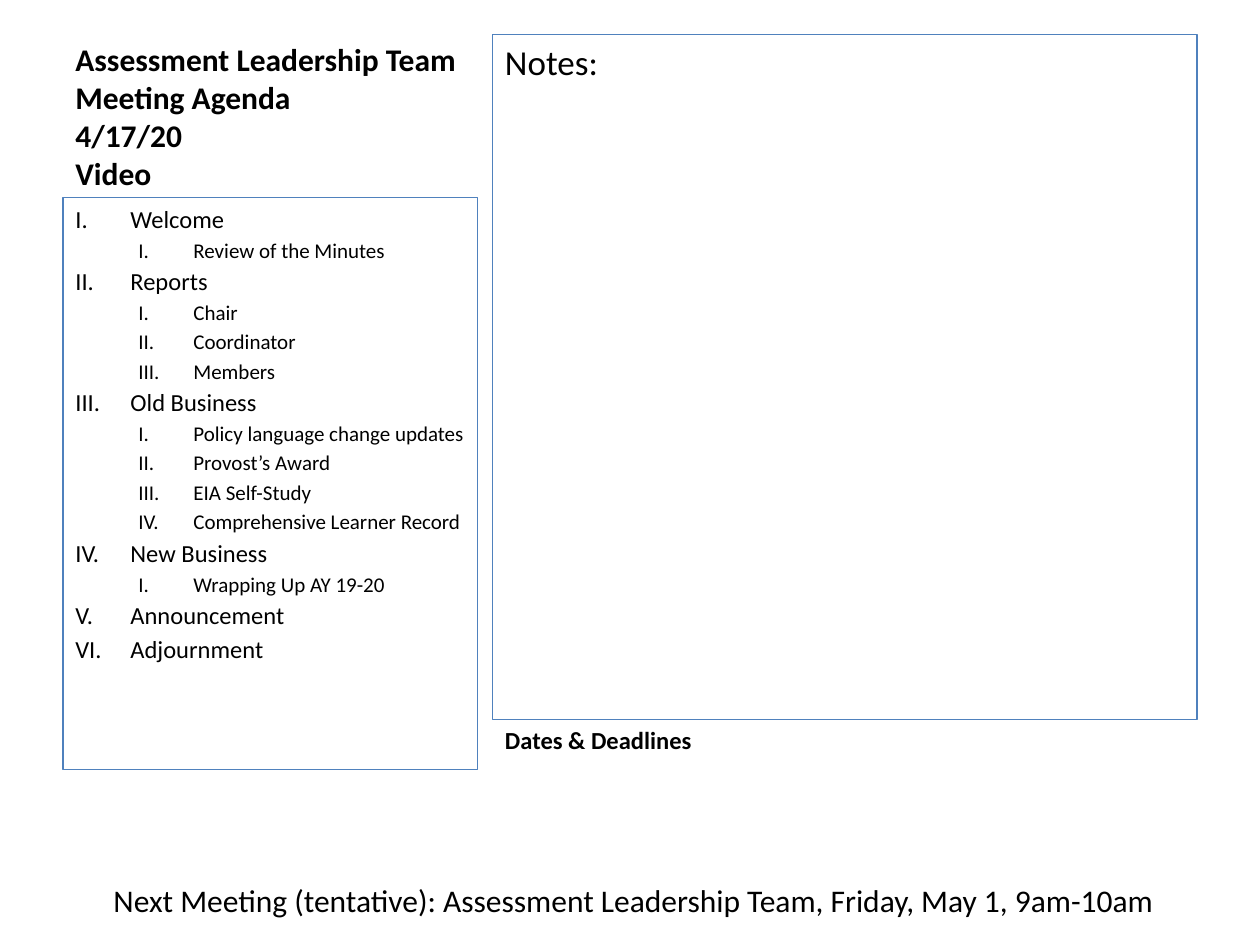
from pptx import Presentation, util as u
from pptx.dml.color import RGBColor
from pptx.enum import shapes, text
from lxml import etree

HUES = {"ink": "000000", "edge": "4F81BD"}
FACE = "Calibri"
GAP = 2.3
NS = "{http://schemas.openxmlformats.org/drawingml/2006/main}"

LEFT, MID = 1.27, 9.93
SIDE = 8.36

ITEMS = [
    ("Welcome", ["Review of the Minutes"]),
    ("Reports", ["Chair", "Coordinator", "Members"]),
    ("Old Business", ["Policy language change updates", "Provost’s Award",
                      "EIA Self-Study", "Comprehensive Learner Record"]),
    ("New Business", ["Wrapping Up AY 19-20"]),
    ("Announcement", []),
    ("Adjournment", []),
]


def hue(name):
    return RGBColor.from_string(HUES[name])


def write(par, words, size, bold=False, align=text.PP_ALIGN.LEFT):
    par.text = words
    par.alignment = align
    for run in par.runs:
        font = run.font
        font.name, font.size, font.bold = FACE, u.Pt(size), bold
        font.color.rgb = hue("ink")


def label(slide, box, words, size, anchor=text.MSO_ANCHOR.TOP, **style):
    frame = slide.shapes.add_textbox(*map(u.Cm, box)).text_frame
    frame.word_wrap = True
    frame.vertical_anchor = anchor
    write(frame.paragraphs[0], words, size, **style)


def panel(slide, box):
    """Add an outlined, unfilled box and return its text frame."""
    rect = slide.shapes.add_shape(shapes.MSO_SHAPE.RECTANGLE, *map(u.Cm, box))
    rect.shadow.inherit = False
    rect.fill.background()
    rect.line.color.rgb = hue("edge")
    rect.line.width = u.Pt(0.75)
    frame = rect.text_frame
    frame.word_wrap = True
    frame.vertical_anchor = text.MSO_ANCHOR.TOP
    return frame


def number(par, level):
    """Give a paragraph a hanging Roman numeral."""
    par.level = level
    props = par._p.get_or_add_pPr()
    props.set("marL", str(u.Cm(1.11 + 1.27 * level)))
    props.set("indent", str(-u.Cm(1.11)))
    etree.SubElement(props, NS + "buFont", typeface="+mj-lt")
    etree.SubElement(props, NS + "buAutoNum", type="romanUcPeriod")


def agenda(slide, box):
    frame = panel(slide, box)
    rows = [row for head, subs in ITEMS
            for row in [(head, 0)] + [(sub, 1) for sub in subs]]
    for i, (words, level) in enumerate(rows):
        par = frame.add_paragraph() if i else frame.paragraphs[0]
        number(par, level)
        if i:
            par.space_before = u.Pt(GAP)
        write(par, words, 12 if level else 14)


def notes(slide, box):
    write(panel(slide, box).paragraphs[0], "Notes:", 20)


def main():
    deck = Presentation()
    deck.slide_width, deck.slide_height = u.Cm(25.4), u.Cm(19.05)
    slide = deck.slides.add_slide(deck.slide_layouts[6])
    label(slide, (LEFT, 0.76, SIDE, 3.23),
          "Assessment Leadership Team\vMeeting Agenda\v4/17/20\vVideo", 18,
          anchor=text.MSO_ANCHOR.BOTTOM, bold=True)
    notes(slide, (MID, 0.7, 14.2, 13.8))
    agenda(slide, (LEFT, 3.98, SIDE, 11.54))
    label(slide, (MID, 14.5, 14.83, 0.86), "Dates & Deadlines", 14, bold=True)
    label(slide, (LEFT, 17.63, 23.01, 1.02),
          "Next Meeting (tentative): Assessment Leadership Team, "
          "Friday, May 1, 9am-10am", 18, align=text.PP_ALIGN.CENTER)
    deck.save("out.pptx")


if __name__ == "__main__":
    main()
